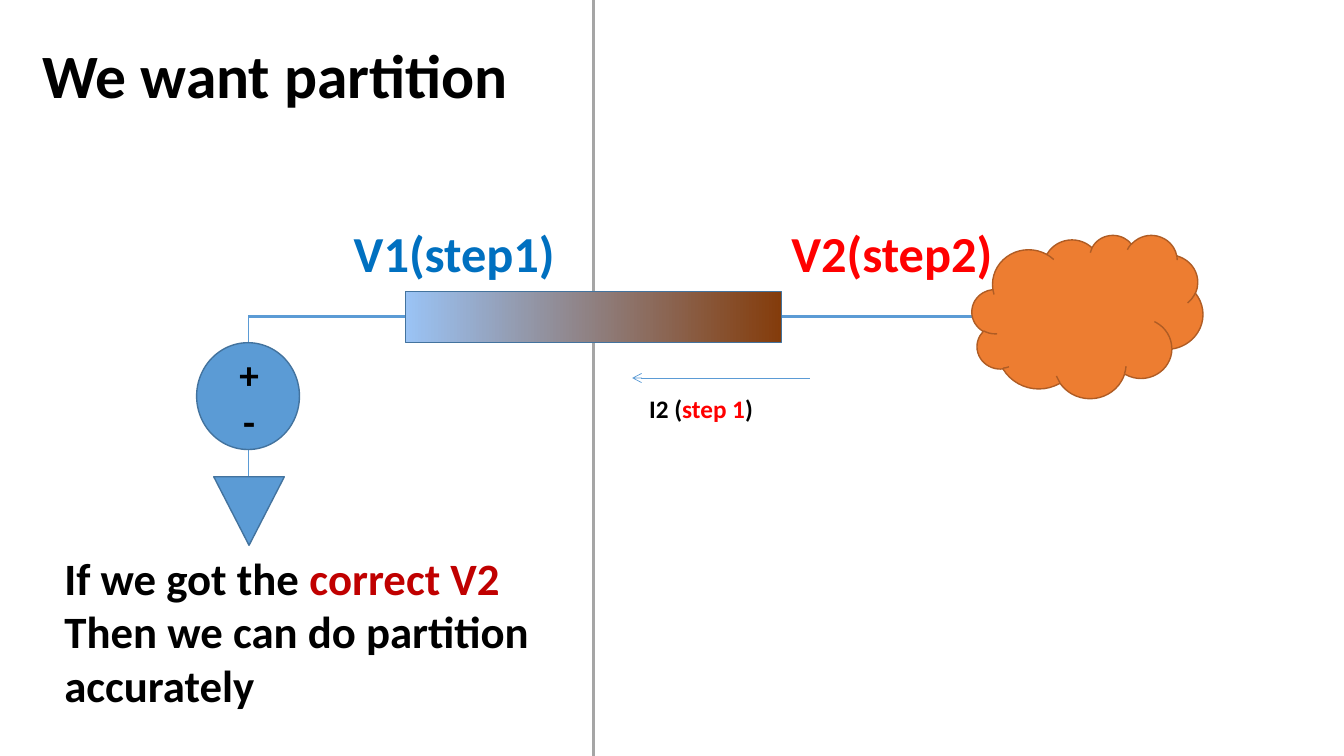
from lxml import etree
from pptx import Presentation
from pptx.dml.color import RGBColor
from pptx.enum.shapes import MSO_CONNECTOR as Connector, MSO_SHAPE as Shape
from pptx.enum.text import MSO_AUTO_SIZE as AutoSize, PP_ALIGN as Align
from pptx.oxml.ns import qn
from pptx.util import Emu, Pt

EMU_PER_PX = 9144  # 100 px to the inch
FONT = "Calibri"
BLACK, RED, DARK_RED = "000000", "FF0000", "C00000"
BLUE, BLUE_EDGE, VOLTAGE_BLUE = "5B9BD5", "43739E", "0070C0"
ORANGE, ORANGE_EDGE, GRAY = "ED7D31", "AF5C24", "A5A5A5"
LINE_START, LINE_END = "9AC3F5", "843C0B"

SOURCE_X, WIRE_Y, PARTITION_X = 246, 314, 589
GROUND_Y = 473


def px(length):
    return Emu(length * EMU_PER_PX)


def color(value):
    return RGBColor.from_string(value)


def add_line(slide, start, end, line_color, width, arrow=False):
    line = slide.shapes.add_connector(
        Connector.STRAIGHT, *map(px, start), *map(px, end))
    line.line.color.rgb = color(line_color)
    line.line.width = Pt(width)
    properties = line._element.spPr
    if arrow:
        etree.SubElement(properties.find(qn("a:ln")), qn("a:tailEnd"), type="arrow")
    etree.SubElement(properties, qn("a:effectLst"))


def add_part(slide, kind, box, fill, edge, rotation=0):
    """A fill is one colour, or a pair of colours for a gradient."""
    part = slide.shapes.add_shape(kind, *map(px, box))
    part.shadow.inherit = False
    part.rotation = rotation
    if isinstance(fill, tuple):
        part.fill.gradient()
        part.fill.gradient_angle = 180
        for stop, stop_color in zip(part.fill.gradient_stops, fill):
            stop.color.rgb = color(stop_color)
    else:
        part.fill.solid()
        part.fill.fore_color.rgb = color(fill)
    part.line.color.rgb = color(edge)
    part.line.width = Pt(1)


def add_label(slide, box, size, paragraphs, align=Align.LEFT):
    """Each paragraph is a list of (text, colour) runs."""
    frame = slide.shapes.add_textbox(*map(px, box)).text_frame
    frame.word_wrap = False
    frame.auto_size = AutoSize.SHAPE_TO_FIT_TEXT
    for index, runs in enumerate(paragraphs):
        paragraph = frame.add_paragraph() if index else frame.paragraphs[0]
        paragraph.alignment = align
        for text, text_color in runs:
            run = paragraph.add_run()
            run.text = text
            run.font.name = FONT
            run.font.size = Pt(size)
            run.font.bold = True
            run.font.color.rgb = color(text_color)


def main():
    presentation = Presentation()
    presentation.slide_width, presentation.slide_height = px(1333), px(750)
    slide = presentation.slides.add_slide(presentation.slide_layouts[6])

    # Wires and the partition line
    add_line(slide, (SOURCE_X, WIRE_Y), (SOURCE_X, GROUND_Y), BLUE, 0.5)
    add_line(slide, (PARTITION_X, 0), (PARTITION_X, 750), GRAY, 2.25)
    add_line(slide, (SOURCE_X, WIRE_Y), (965, WIRE_Y), BLUE, 2.25)

    # Transmission line and the network cloud
    add_part(slide, Shape.RECTANGLE, (402, 289, 373, 51),
             (LINE_START, LINE_END), BLUE_EDGE, rotation=180)
    add_part(slide, Shape.CLOUD, (964, 233, 229, 162), ORANGE, ORANGE_EDGE)

    # Title and voltages
    add_label(slide, (32, 32, 501, 84), 44, [[("We want partition", BLACK)]])
    add_label(slide, (341, 215, 222, 71), 36, [[("V1(step1)", VOLTAGE_BLUE)]])
    add_label(slide, (775, 215, 222, 71), 36, [[("V2(step2)", RED)]])

    # Current
    add_line(slide, (803, 375), (627, 375), BLUE, 0.5, arrow=True)
    add_label(slide, (634, 385, 124, 40), 18,
              [[("I2 (", BLACK), ("step 1", RED), (")", BLACK)]])

    # Voltage source
    add_part(slide, Shape.OVAL, (195, 340, 102, 106), BLUE, BLUE_EDGE)
    add_label(slide, (227, 343, 40, 104), 28,
              [[("+", BLACK)], [("-", BLACK)]], Align.CENTER)

    # Conclusion
    add_label(slide, (54, 541, 486, 172), 32, [
        [("If we got the ", BLACK), ("correct V2", DARK_RED)],
        [("Then we can do partition", BLACK)],
        [("accurately", BLACK)],
    ])

    # Ground
    add_part(slide, Shape.ISOSCELES_TRIANGLE, (212, GROUND_Y, 70, 68),
             BLUE, BLUE_EDGE, rotation=180)

    presentation.save("out.pptx")


if __name__ == "__main__":
    main()
